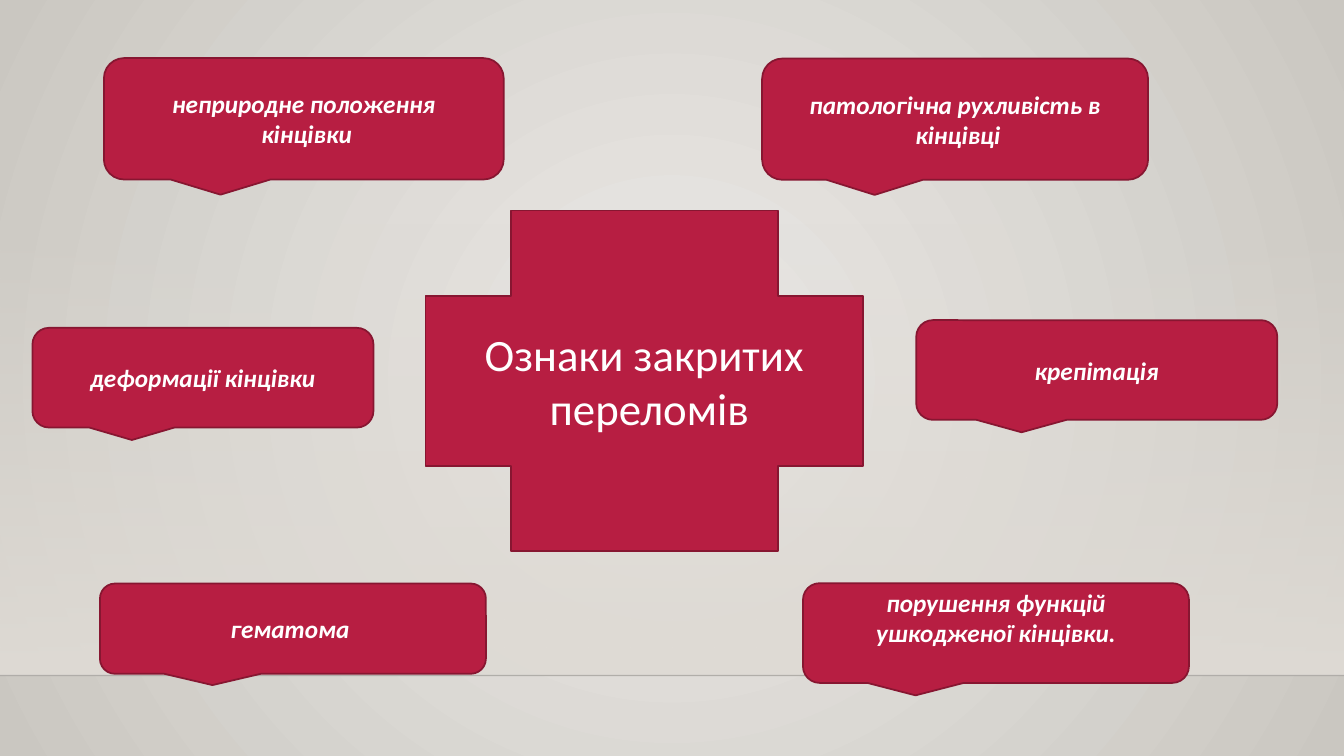
from lxml import etree
from pptx import Presentation
from pptx.dml.color import RGBColor
from pptx.enum import shapes, text
from pptx.oxml import ns
from pptx.util import Pt

# Content: lines, then left, top, width, height in points
WIDTH, HEIGHT = 960, 540
FLOOR = 482.5
BAND_TOP = 159
TITLE = (["Ознаки закритих", " переломів"], (304, 150.4, 312.6, 243.4))
SIGNS = [
    (["неприродне положення", " кінцівки"], (74.2, 41.5, 285.6, 86.7)),
    (["патологічна рухливість в", " кінцівці"], (544.4, 41.8, 275.7, 86.6)),
    (["деформації кінцівки"], (23.2, 234.2, 243.6, 71.2)),
    (["крепітація"], (654.5, 228.7, 257.9, 71.2)),
    (["порушення функцій ушкодженої кінцівки."], (573.6, 416.6, 275.7, 71.2)),
    (["гематома "], (71.4, 416.8, 275.7, 64.5)),
]
RAISED = 4  # this sign keeps one free line below its text
LINE_HEIGHT = 22
RED, DARK_RED, WHITE = "B71E42", "871631", "FFFFFF"
BAND = "DFDBD5"


def color(code):
    return RGBColor.from_string(code)


def gradient(stops, direction):
    """Gradient fill element from (percent, colour, opacity) stops."""
    parts = "".join(
        f'<a:gs pos="{pos * 1000}"><a:srgbClr val="{code}">'
        f'<a:alpha val="{opacity * 1000}"/></a:srgbClr></a:gs>'
        for pos, code, opacity in stops)
    return etree.fromstring(
        f'<a:gradFill {ns.nsdecls("a")} rotWithShape="1">'
        f'<a:gsLst>{parts}</a:gsLst>{direction}</a:gradFill>')


def replace_fill(properties, fill):
    old = properties.find(ns.qn("a:solidFill"))
    properties.replace(old, fill)


def add_shape(kind, frame):
    shape = page.shapes.add_shape(kind, *map(Pt, frame))
    shape.shadow.inherit = False
    shape.fill.solid()
    shape.fill.fore_color.rgb = color(RED)
    shape.line.color.rgb = color(DARK_RED)
    shape.line.width = Pt(1.25)
    return shape


def write(shape, lines, size, emphasis=False, bottom=3.6):
    box = shape.text_frame
    box.word_wrap = True
    box.vertical_anchor = text.MSO_ANCHOR.MIDDLE
    box.margin_bottom = Pt(bottom)
    for i, line in enumerate(lines):
        para = box.paragraphs[0] if i == 0 else box.add_paragraph()
        para.alignment = text.PP_ALIGN.CENTER
        span = para.add_run()
        span.text = line
        span.font.name = "Calibri"
        span.font.size = Pt(size)
        span.font.bold = span.font.italic = emphasis
        span.font.color.rgb = color(WHITE)


deck = Presentation()
deck.slide_width, deck.slide_height = Pt(WIDTH), Pt(HEIGHT)
page = deck.slides.add_slide(deck.slide_layouts[6])

# Background: light from the centre
page.background.fill.solid()
background = page.background.fill.fore_color
background.rgb = color(BAND)
glow = gradient(
    [(0, "ECEAE7", 100), (100, "CAC7C1", 100)],
    '<a:path path="circle"><a:fillToRect l="50000" t="50000" r="50000" b="50000"/></a:path>')
replace_fill(page.element.find(".//" + ns.qn("p:bgPr")), glow)

# Wall fading in towards the floor line
wall = add_shape(shapes.MSO_SHAPE.RECTANGLE, (0, BAND_TOP, WIDTH, FLOOR - BAND_TOP))
wall.line.fill.background()
fade = gradient([(0, BAND, 0), (100, BAND, 100)], '<a:lin ang="5400000" scaled="0"/>')
replace_fill(wall.element.spPr, fade)

floor = page.shapes.add_connector(
    shapes.MSO_CONNECTOR.STRAIGHT, Pt(0), Pt(FLOOR), Pt(WIDTH), Pt(FLOOR))
floor.line.width = Pt(1)
floor.line.color.rgb = color("000001")
ink = floor.element.spPr.find(".//" + ns.qn("a:srgbClr"))
etree.SubElement(ink, ns.qn("a:alpha"), val="20000")
etree.SubElement(floor.element.spPr, ns.qn("a:effectLst"))

# Cross with the title
lines, frame = TITLE
write(add_shape(shapes.MSO_SHAPE.CROSS, frame), lines, 32)

# Signs around it
for number, (lines, frame) in enumerate(SIGNS):
    callout = add_shape(shapes.MSO_SHAPE.ROUNDED_RECTANGULAR_CALLOUT, frame)
    bottom = 3.6 + LINE_HEIGHT if number == RAISED else 3.6
    write(callout, lines, 18, emphasis=True, bottom=bottom)

deck.save("out.pptx")
